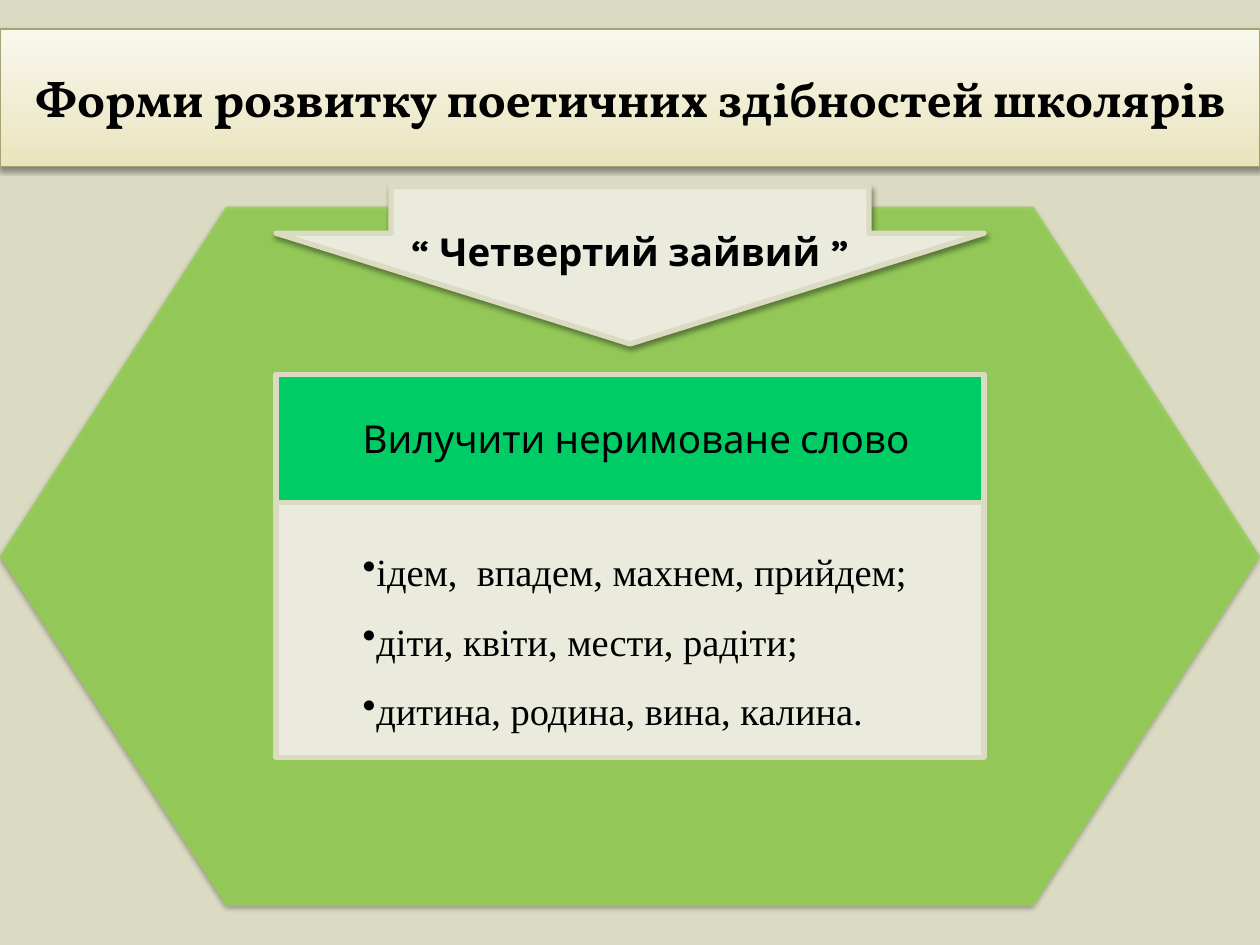
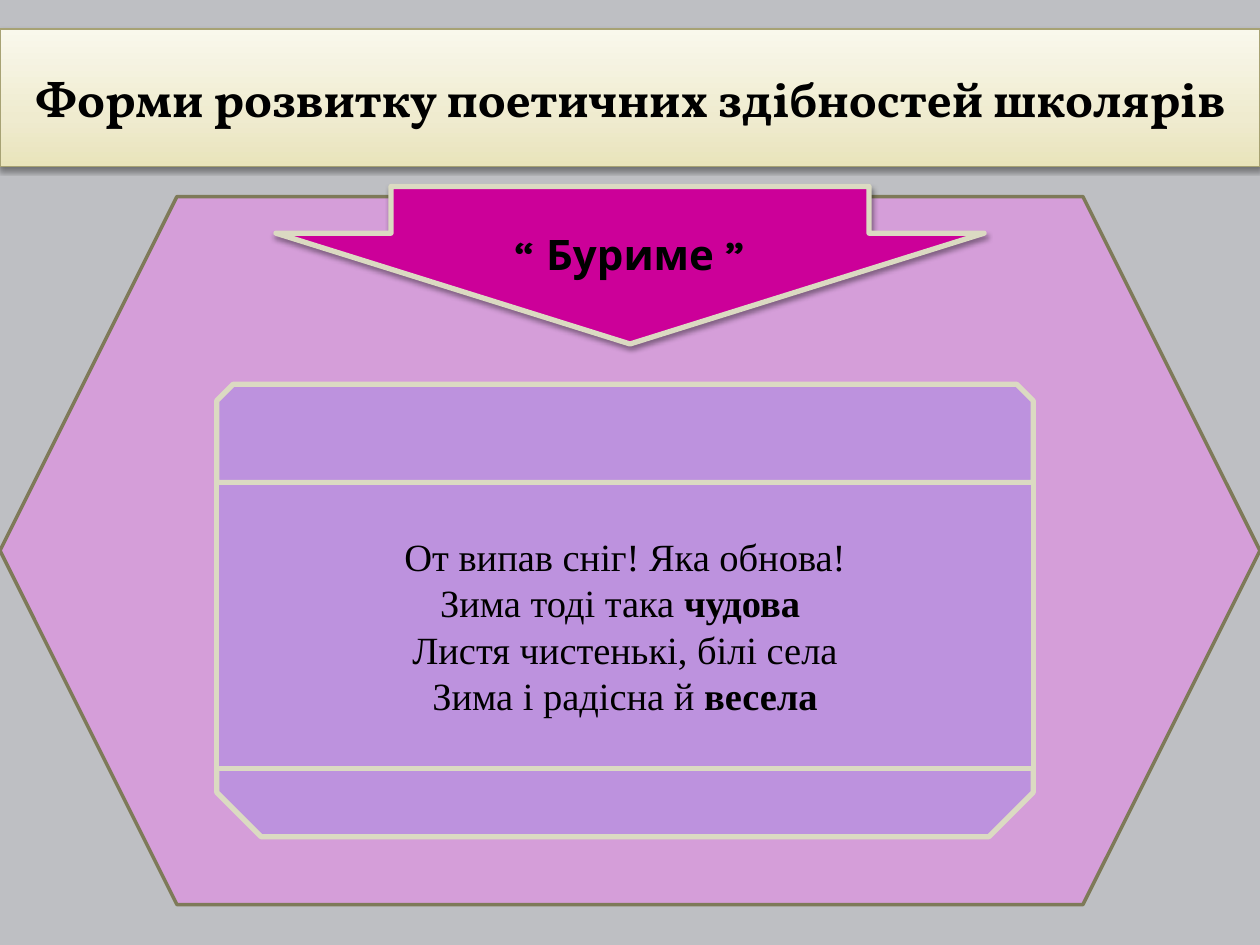
import copy
import pptx
import pptx.dml.color
import pptx.enum.shapes
import pptx.enum.text
import pptx.oxml
import pptx.oxml.ns
import pptx.util

Inches = pptx.util.Inches
Pt = pptx.util.Pt
Shape = pptx.enum.shapes.MSO_SHAPE
Align = pptx.enum.text.PP_ALIGN
Anchor = pptx.enum.text.MSO_ANCHOR
qn = pptx.oxml.ns.qn

BLACK = "000000"
CREAM = "EAEADD"
BORDER = "DBDAC2"
LILAC = "BD92DE"
TITLE = "Форми розвитку поетичних здібностей школярів"
TITLE_STOPS = [(0, "E9E4BB"), (0.35, "EFEBCF"), (1, "F9F8EC")]


def paint(shape, fill=None, line=None, width=3, alpha=None, shadow=None):
    color = pptx.dml.color.RGBColor.from_string
    properties = shape.element.spPr
    if fill:
        shape.fill.solid()
        shape.fill.fore_color.rgb = color(fill)
    else:
        shape.fill.gradient()
        shape.fill.gradient_angle = 90
        stops = properties.find(".//" + qn("a:gsLst"))
        stops.append(copy.deepcopy(stops[-1]))
        for stop, (position, tone) in zip(shape.fill.gradient_stops, TITLE_STOPS):
            stop.position = position
            stop.color.rgb = color(tone)
    if alpha:
        tone = properties.find(qn("a:solidFill"))[0]
        tone.append(tone.makeelement(qn("a:alpha"), {"val": str(alpha * 1000)}))
    if line:
        shape.line.color.rgb = color(line)
        shape.line.width = Pt(width)
    else:
        shape.line.fill.background()
    shape.shadow.inherit = False
    if shadow:
        opacity, distance = shadow
        properties.find(qn("a:effectLst")).append(pptx.oxml.parse_xml(
            f'<a:outerShdw {pptx.oxml.ns.nsdecls("a")} blurRad="{Pt(3.1)}" '
            f'dist="{Pt(distance)}" dir="5400000" rotWithShape="0">'
            f'<a:srgbClr val="{BLACK}"><a:alpha val="{opacity * 1000}"/></a:srgbClr>'
            '</a:outerShdw>'))


def write(shape, lines, font, size, align=Align.CENTER, anchor=Anchor.MIDDLE,
          indent=False, bullet=False):
    frame = shape.text_frame
    frame.word_wrap = True
    frame.auto_size = pptx.enum.text.MSO_AUTO_SIZE.NONE
    frame.vertical_anchor = anchor
    for index, line in enumerate(lines):
        para = frame.paragraphs[0] if index == 0 else frame.add_paragraph()
        para.alignment = align
        if indent:
            settings = para._p.get_or_add_pPr()
            settings.set("marL", str(Inches(0.19)))
            settings.set("indent", str(Inches(0.4)))
        if bullet:
            para.line_spacing = 1.5
            settings.append(settings.makeelement(qn("a:buChar"), {"char": "•"}))
        for text, bold in line:
            span = para.add_run()
            span.text = text
            span.font.name = font
            span.font.size = Pt(size)
            span.font.bold = bold
            span.font.color.rgb = pptx.dml.color.RGBColor.from_string(BLACK)


deck = pptx.Presentation()
deck.slide_width = Inches(10)
deck.slide_height = Inches(7.5)

pages = []
for background in ["DBDAC2", "BEBFC3"]:
    page = deck.slides.add_slide(deck.slide_layouts[5])
    page.background.fill.solid()
    page.background.fill.fore_color.rgb = pptx.dml.color.RGBColor.from_string(background)
    title = page.shapes.title
    title.left, title.top = Inches(0), Inches(0.23)
    title.width, title.height = Inches(10), Inches(1.09)
    paint(title, line="A7A274", width=0.75, shadow=(38, 1.6))
    write(title, [[(TITLE, True)]], "Vollkorn", 28)
    pages.append(page)
odd_word_page, rhyme_page = pages

hexagon = odd_word_page.shapes.add_shape(
    Shape.HEXAGON, Inches(0), Inches(1.64), Inches(10), Inches(5.55))
hexagon.adjustments[0] = 0.324
paint(hexagon, "92D050", alpha=85, shadow=(35, 1.8))

words = odd_word_page.shapes.add_shape(
    Shape.FLOWCHART_PROCESS, Inches(2.19), Inches(3.98), Inches(5.62), Inches(2.03))
paint(words, CREAM, BORDER)
word_rows = [
    "ідем,  впадем, махнем, прийдем;",
    "діти, квіти, мести, радіти;",
    "дитина, родина, вина, калина.",
]
write(words, [[(row, False)] for row in word_rows], "Times New Roman", 22,
      align=Align.LEFT, indent=True, bullet=True)

task = odd_word_page.shapes.add_shape(
    Shape.FLOWCHART_PROCESS, Inches(2.19), Inches(2.97), Inches(5.62), Inches(1.02))
paint(task, "00CC66", BORDER)
write(task, [[("Вилучити неримоване слово", False)]], "Karla", 22,
      align=Align.LEFT, indent=True)

hexagon = rhyme_page.shapes.add_shape(
    Shape.HEXAGON, Inches(0), Inches(1.56), Inches(10), Inches(5.62))
hexagon.adjustments[0] = 0.25
paint(hexagon, "FF66FF", "7E7A59", width=2, alpha=37)

scroll_parts = [
    (Shape.SNIP_2_SAME_RECTANGLE, 4.53, 2.11, 180),
    (Shape.SNIP_2_SAME_RECTANGLE, 3.05, 0.78, 0),
    (Shape.RECTANGLE, 3.83, 2.27, 0),
]
for kind, top, height, rotation in scroll_parts:
    poem = rhyme_page.shapes.add_shape(
        kind, Inches(1.72), Inches(top), Inches(6.48), Inches(height))
    poem.rotation = rotation
    paint(poem, LILAC, BORDER)
write(poem, [
    [("От випав сніг! Яка обнова!", False)],
    [("Зима тоді така ", False), ("чудова ", True)],
    [("Листя чистенькі, білі села", False)],
    [("Зима і радісна й ", False), ("весела", True)],
], "Times New Roman", 22)

arrows = [
    (odd_word_page, "“ Четвертий зайвий ”", CREAM, 22),
    (rhyme_page, "“ Буриме ”", "CC0099", 24),
]
for page, name, fill, size in arrows:
    arrow = page.shapes.add_shape(
        Shape.DOWN_ARROW, Inches(2.19), Inches(1.48), Inches(5.62), Inches(1.25))
    arrow.adjustments[0] = 0.675
    arrow.adjustments[1] = 0.703
    paint(arrow, fill, BORDER, shadow=(38, 1.6))
    arrow.text_frame.margin_top = Inches(0.33)
    arrow.text_frame.margin_bottom = Inches(0)
    write(arrow, [[(name, True)]], "Karla", size, anchor=Anchor.TOP)

deck.save("out.pptx")
